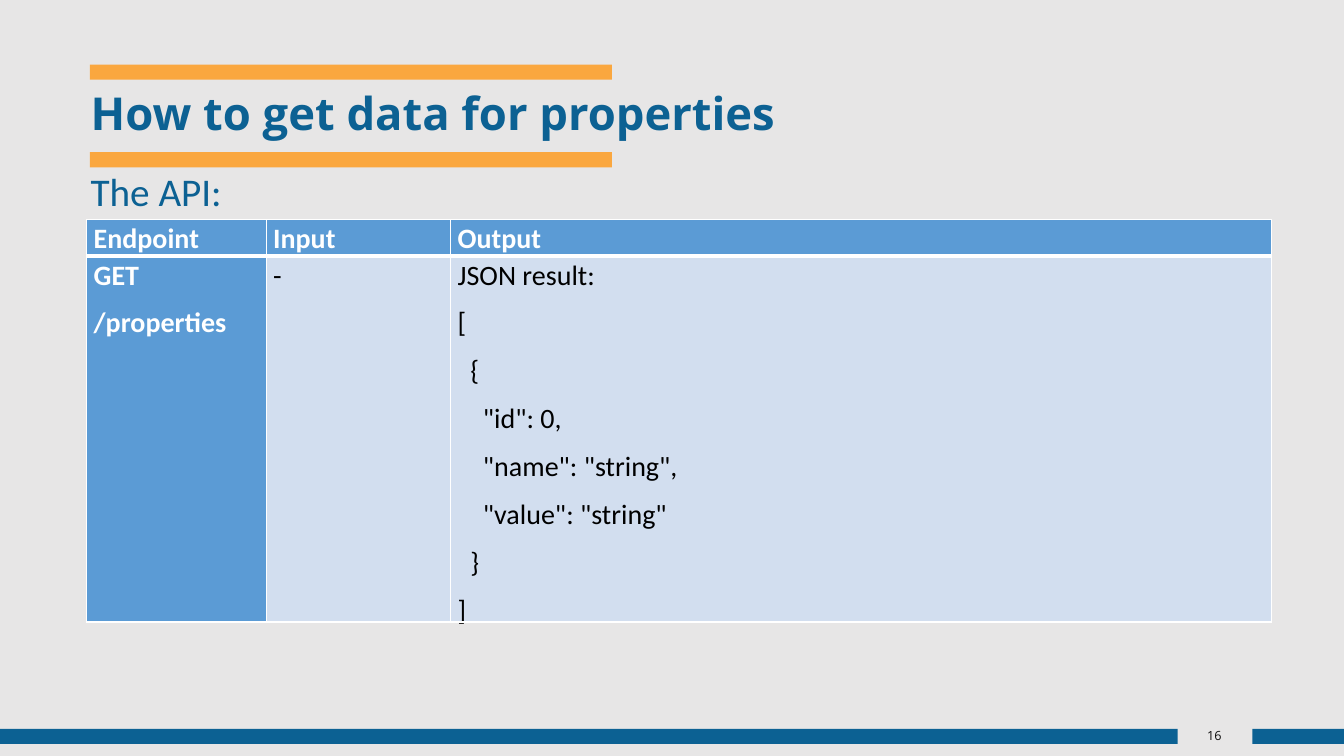
from lxml.etree import SubElement
from pptx import Presentation
from pptx.dml.color import RGBColor
from pptx.enum.shapes import MSO_SHAPE
from pptx.enum.text import MSO_ANCHOR, PP_ALIGN
from pptx.oxml.ns import qn
from pptx.util import Inches, Pt

BLUE, WHITE = "0C6193", "FFFFFF"


def color(code):
    return RGBColor.from_string(code)


def write(para, text, size, font, code, bold=False):
    run = para.add_run()
    run.text = text
    run.font.size = Pt(size)
    run.font.name = font
    run.font.bold = bold
    run.font.color.rgb = color(code)


deck = Presentation()
deck.slide_width, deck.slide_height = Inches(13.33), Inches(7.5)
slide = deck.slides.add_slide(deck.slide_layouts[5])
slide.background.fill.solid()
slide.background.fill.fore_color.rgb = color("E7E6E6")

# Title rules and footer bars
bars = [(0.89, 0.64, 5.18, "FAA73F"), (0.89, 1.51, 5.18, "FAA73F"),
        (0, 7.23, 11.68, BLUE), (12.42, 7.23, 0.91, BLUE)]
for left, top, width, code in bars:
    bar = slide.shapes.add_shape(MSO_SHAPE.RECTANGLE, Inches(left), Inches(top),
                                 Inches(width), Inches(0.15))
    bar.shadow.inherit = False
    bar.fill.solid()
    bar.fill.fore_color.rgb = color(code)
    bar.line.fill.background()

# Title
title = slide.shapes.title
title.left, title.top = Inches(0.8), Inches(0.88)
title.width, title.height = Inches(11.62), Inches(0.53)
title.text_frame.vertical_anchor = MSO_ANCHOR.MIDDLE
para = title.text_frame.paragraphs[0]
para.alignment = PP_ALIGN.LEFT
para.line_spacing = 0.9
write(para, "How to get data for properties", 32.4, "Open Sans", BLUE, True)

# Subtitle and page number
notes = [(0.8, 1.61, 11.87, 0.57, "The API:", 28, "Calibri", BLUE,
          PP_ALIGN.LEFT, MSO_ANCHOR.TOP),
         (11.68, 7.15, 0.73, 0.29, "16", 9, "Open Sans", "0D0D0D",
          PP_ALIGN.CENTER, MSO_ANCHOR.MIDDLE)]
for left, top, width, height, text, size, font, code, align, anchor in notes:
    box = slide.shapes.add_textbox(Inches(left), Inches(top), Inches(width), Inches(height))
    box.text_frame.word_wrap = True
    box.text_frame.vertical_anchor = anchor
    para = box.text_frame.paragraphs[0]
    para.alignment = align
    write(para, text, size, font, code)

# Endpoint table
rows = [
    [["Endpoint"], ["Input"], ["Output"]],
    [["GET", "/properties"], ["-"],
     ["JSON result:", "[", "  {", '    "id": 0,', '    "name": "string",',
      '    "value": "string"', "  }", "]"]],
]
table = slide.shapes.add_table(2, 3, Inches(0.86), Inches(2.18),
                               Inches(11.75), Inches(3.98)).table
for col, width in zip(table.columns, (1.78, 1.83, 8.14)):
    col.width = Inches(width)
for row, height in zip(table.rows, (0.36, 3.62)):
    row.height = Inches(height)

for r, row in enumerate(rows):
    for c, lines in enumerate(row):
        cell = table.cell(r, c)
        head = r == 0 or c == 0
        cell.margin_left = cell.margin_right = Inches(0.07)
        cell.margin_top = cell.margin_bottom = 0

        # White borders, thicker between header and body
        props = cell._tc.get_or_add_tcPr()
        for side in "LRTB":
            thick = (r, side) in ((0, "B"), (1, "T"))
            line = SubElement(props, qn(f"a:ln{side}"), w=str(Pt(3 if thick else 1)))
            fill = SubElement(line, qn("a:solidFill"))
            SubElement(fill, qn("a:srgbClr"), val=WHITE)
        cell.fill.solid()
        cell.fill.fore_color.rgb = color("5B9BD5" if head else "D2DEEF")

        for i, text in enumerate(lines):
            frame = cell.text_frame
            para = frame.add_paragraph() if i else frame.paragraphs[0]
            para.line_spacing = 1.07
            para.space_after = Pt(8)
            write(para, text, 20, "Calibri", WHITE if head else "000000", head)

deck.save("out.pptx")
